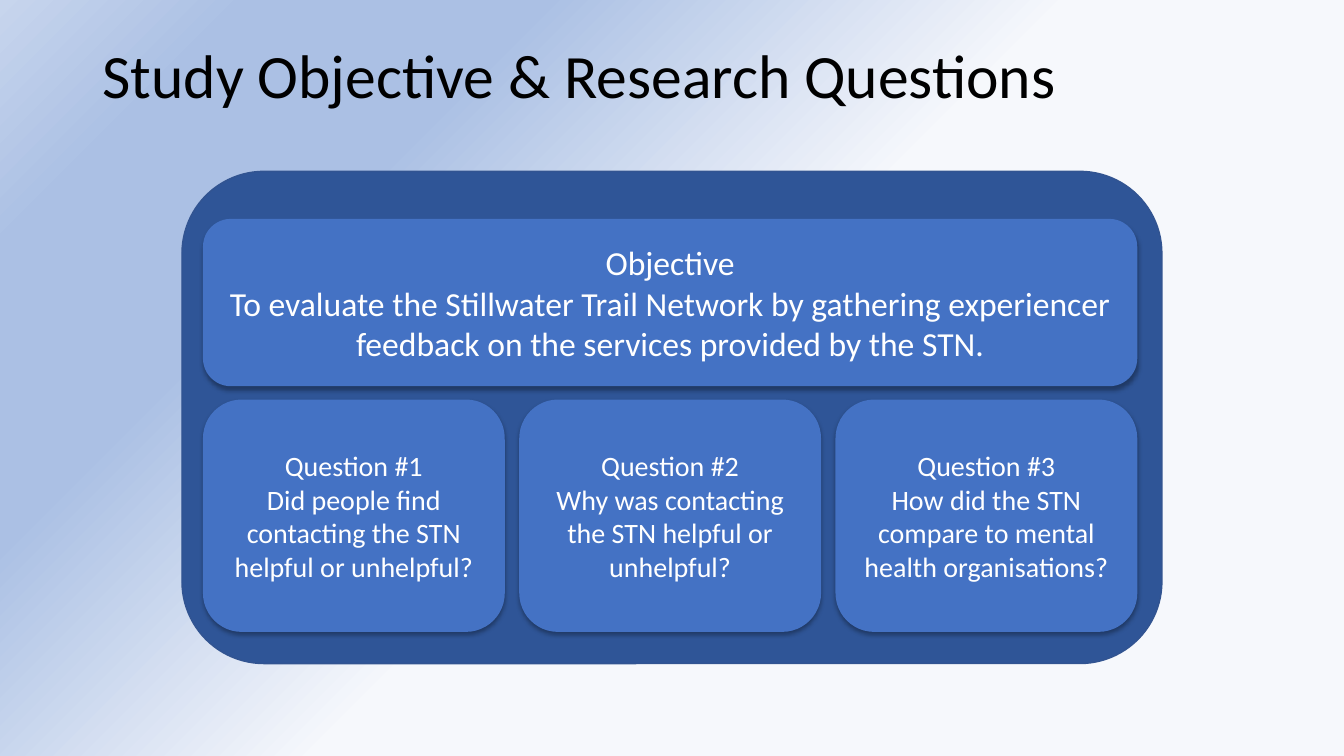
from lxml.etree import SubElement
from pptx import Presentation
from pptx.dml.color import RGBColor
from pptx.enum.shapes import MSO_SHAPE as Shape
from pptx.enum.text import MSO_ANCHOR as Anchor, MSO_AUTO_SIZE as AutoSize, PP_ALIGN as Align
from pptx.oxml.ns import qn
from pptx.util import Pt

BLACK = RGBColor(0x00, 0x00, 0x00)
WHITE = RGBColor(0xFF, 0xFF, 0xFF)
PANEL_BLUE = RGBColor(0x2F, 0x55, 0x97)
PANEL_EDGE = RGBColor(0x32, 0x54, 0x91)
CARD_BLUE = RGBColor(0x44, 0x72, 0xC4)
PALE = RGBColor(0xF6, 0xF8, 0xFC)
SKY = RGBColor(0xAB, 0xC0, 0xE4)
MIST = RGBColor(0xC7, 0xD5, 0xED)

BACKGROUND_STOPS = [(49, PALE), (74, SKY), (88, SKY), (100, MIST)]
TITLE = "Study Objective & Research Questions"
OBJECTIVE = (
    "Objective",
    "To evaluate the Stillwater Trail Network by gathering experiencer "
    "feedback on the services provided by the STN.",
)
QUESTIONS = [
    "Did people find contacting the STN helpful or unhelpful?",
    "Why was contacting the STN helpful or unhelpful?",
    "How did the STN compare to mental health organisations?",
]


def apply_format(target, values):
    """Set each attribute of the target from a dict."""
    for name, value in values.items():
        setattr(target, name, value)


def write_lines(frame, lines, size, color, para_format):
    """Write one formatted paragraph per line of text."""
    for index, line in enumerate(lines):
        para = frame.add_paragraph() if index else frame.paragraphs[0]
        apply_format(para, para_format)
        span = para.add_run()
        span.text = line
        apply_format(span.font, {"name": "Calibri", "size": Pt(size)})
        span.font.color.rgb = color


def paint_background(page):
    """Fill the page with a diagonal gradient."""
    fill = page.background.fill
    fill.gradient()
    fill.gradient_angle = 135
    stop_list = next(page.element.iter(qn("a:gsLst")))
    for stop in list(stop_list):
        stop_list.remove(stop)
    for percent, color in BACKGROUND_STOPS:
        stop = SubElement(stop_list, qn("a:gs"), pos=str(percent * 1000))
        SubElement(stop, qn("a:srgbClr"), val=str(color))


def add_title(page, left, top, width, height):
    """Place the title placeholder in the given box."""
    title = page.shapes.title
    apply_format(title, {"left": Pt(left), "top": Pt(top),
                         "width": Pt(width), "height": Pt(height)})
    apply_format(title.text_frame, {"word_wrap": True, "auto_size": AutoSize.NONE,
                                    "vertical_anchor": Anchor.TOP})
    write_lines(title.text_frame, [TITLE], 44, BLACK,
                {"alignment": Align.LEFT, "line_spacing": 0.9})


def add_rounded(group, box, color):
    """Add a plain filled rounded rectangle."""
    shape = group.shapes.add_shape(Shape.ROUNDED_RECTANGLE, *map(Pt, box))
    shape.fill.solid()
    shape.fill.fore_color.rgb = color
    shape.line.fill.background()
    shape.shadow.inherit = False
    return shape


def add_card(group, box, lines, size):
    """Add a card with centred text and a soft shadow below it."""
    card = add_rounded(group, box, CARD_BLUE)
    effects = next(card.element.iter(qn("a:effectLst")))
    shadow = SubElement(effects, qn("a:outerShdw"), blurRad=str(Pt(3.5)),
                        dist=str(Pt(2.2)), dir="5400000", rotWithShape="0")
    color = SubElement(shadow, qn("a:srgbClr"), val=str(BLACK))
    SubElement(color, qn("a:alpha"), val="32000")
    apply_format(card.text_frame, {"word_wrap": True, "vertical_anchor": Anchor.MIDDLE})
    write_lines(card.text_frame, lines, size, WHITE, {"alignment": Align.CENTER})


def add_panel(page, left, top, width, height):
    """Draw the panel with the objective above a row of questions."""
    group = page.shapes.add_group_shape()
    panel = add_rounded(group, (left, top, width, height), PANEL_BLUE)
    panel.line.color.rgb = PANEL_EDGE
    panel.line.width = Pt(1)

    inner_left, inner_width, gap = left + 15, width - 32.6, 10.3
    add_card(group, (inner_left, top + 34, inner_width, 119.5), OBJECTIVE, 24)

    card_width = (inner_width - gap * (len(QUESTIONS) - 1)) / len(QUESTIONS)
    for index, question in enumerate(QUESTIONS):
        box = (inner_left + index * (card_width + gap), top + 163, card_width, 166)
        add_card(group, box, (f"Question #{index + 1}", question), 20)


def main():
    """Build and save the deck."""
    deck = Presentation()
    apply_format(deck, {"slide_width": Pt(960), "slide_height": Pt(540)})
    page = deck.slides.add_slide(deck.slide_layouts[5])
    paint_background(page)
    add_panel(page, 130, 122.4, 700, 351.6)
    add_title(page, 66, 28.8, 828, 104.4)
    deck.save("out.pptx")


if __name__ == "__main__":
    main()
